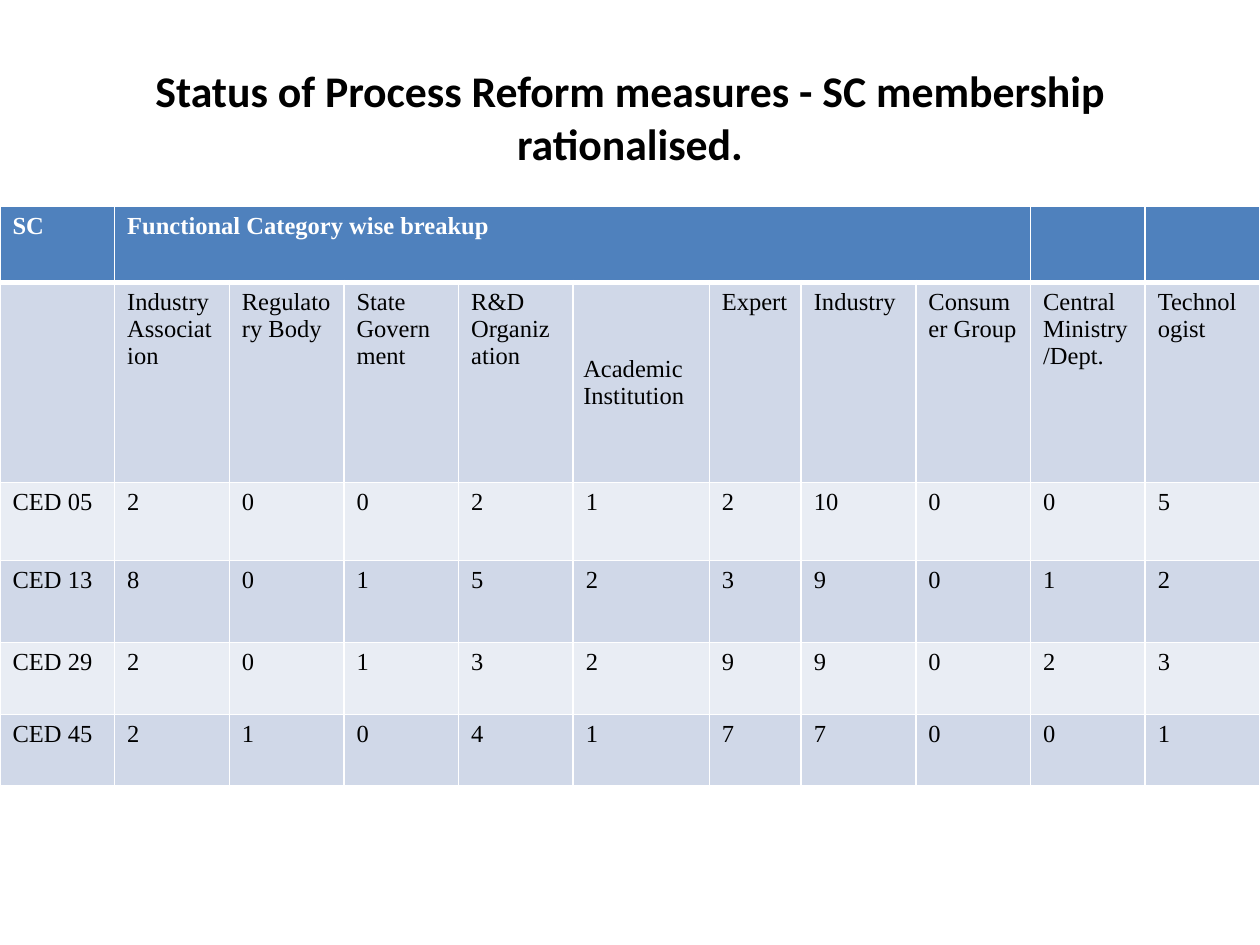
from dataclasses import dataclass

from lxml.etree import SubElement
from pptx import Presentation
from pptx.dml.color import RGBColor
from pptx.enum.text import MSO_ANCHOR, PP_ALIGN
from pptx.oxml.ns import qn
from pptx.util import Inches, Pt

COLORS = {
    "text": "000000",
    "header": "4F81BD",
    "light": "E9EDF4",
    "dark": "D0D8E8",
    "white": "FFFFFF",
}
CATEGORIES = ["Industry Association", "Regulatory Body", "State Government",
              "R&D Organization", "Academic Institution", "Expert", "Industry",
              "Consumer Group", "Central Ministry/Dept.", "Technologist"]
COLUMN_WIDTHS = [0.91] * 5 + [1.08, 0.73] + [0.91] * 4
ACADEMIC_COLUMN = 5
HEADER_SPAN_END = 8
THIN, THICK = 1, 3


@dataclass
class BreakupRow:
    height: float
    texts: list
    fill: str
    color: str = "text"
    bold: bool = False
    top: int = THIN
    bottom: int = THIN


def committee(name: str, height: float, fill: str, *counts: int) -> BreakupRow:
    return BreakupRow(height, [name, *map(str, counts)], fill)


ROWS = [
    BreakupRow(0.6, ["SC", "Functional Category wise breakup"] + [""] * 9,
               "header", "white", True, bottom=THICK),
    BreakupRow(1.59, ["", *CATEGORIES], "dark", top=THICK),
    committee("CED 05", 0.62, "light", 2, 0, 0, 2, 1, 2, 10, 0, 0, 5),
    committee("CED 13", 0.65, "dark", 8, 0, 1, 5, 2, 3, 9, 0, 1, 2),
    committee("CED 29", 0.57, "light", 2, 0, 1, 3, 2, 9, 9, 0, 2, 3),
    committee("CED 45", 0.57, "dark", 2, 1, 0, 4, 1, 7, 7, 0, 0, 1),
]


def rgb(name: str) -> RGBColor:
    return RGBColor.from_string(COLORS[name])


def set_font(font, name: str, size: float, color: str, bold: bool) -> None:
    font.name, font.size, font.bold = name, Pt(size), bold
    font.color.rgb = rgb(color)


def add_borders(cell, top: int, bottom: int) -> None:
    properties = cell._tc.get_or_add_tcPr()
    for side, width in (("L", THIN), ("R", THIN), ("T", top), ("B", bottom)):
        line = SubElement(properties, qn(f"a:ln{side}"), w=str(Pt(width)))
        fill = SubElement(line, qn("a:solidFill"))
        SubElement(fill, qn("a:srgbClr"), val=COLORS["white"])


def fill_cell(cell, text: str, row: BreakupRow) -> None:
    add_borders(cell, row.top, row.bottom)
    cell.fill.solid()
    cell.fill.fore_color.rgb = rgb(row.fill)
    cell.text = text
    set_font(cell.text_frame.paragraphs[0].font, "Times New Roman", 14,
             row.color, row.bold)


def add_breakup_table(slide) -> None:
    table = slide.shapes.add_table(
        len(ROWS), len(COLUMN_WIDTHS), Inches(0), Inches(1.64), Inches(10),
        Inches(sum(row.height for row in ROWS))).table
    for column, width in zip(table.columns, COLUMN_WIDTHS):
        column.width = Inches(width)
    for r, row in enumerate(ROWS):
        table.rows[r].height = Inches(row.height)
        for c, text in enumerate(row.texts):
            fill_cell(table.cell(r, c), text, row)
    table.cell(0, 1).merge(table.cell(0, HEADER_SPAN_END))

    # The academic heading sits mid-height with even margins
    academic = table.cell(1, ACADEMIC_COLUMN)
    academic.vertical_anchor = MSO_ANCHOR.MIDDLE
    academic.margin_left = academic.margin_right = Inches(0.08)
    academic.margin_top = academic.margin_bottom = Inches(0.08)


def add_title(slide) -> None:
    title = slide.shapes.title
    title.left, title.top = Inches(0.5), Inches(0.3)
    title.width, title.height = Inches(9), Inches(1.25)
    frame = title.text_frame
    frame.text = "Status of Process Reform measures - SC membership rationalised."
    frame.word_wrap = True
    frame.vertical_anchor = MSO_ANCHOR.MIDDLE
    heading = frame.paragraphs[0]
    heading.alignment = PP_ALIGN.CENTER
    set_font(heading.font, "Calibri", 25, "text", True)


def main() -> None:
    presentation = Presentation()
    presentation.slide_width, presentation.slide_height = Inches(10), Inches(7.5)
    slide = presentation.slides.add_slide(presentation.slide_layouts[5])
    add_title(slide)
    add_breakup_table(slide)
    presentation.save("out.pptx")


if __name__ == "__main__":
    main()
